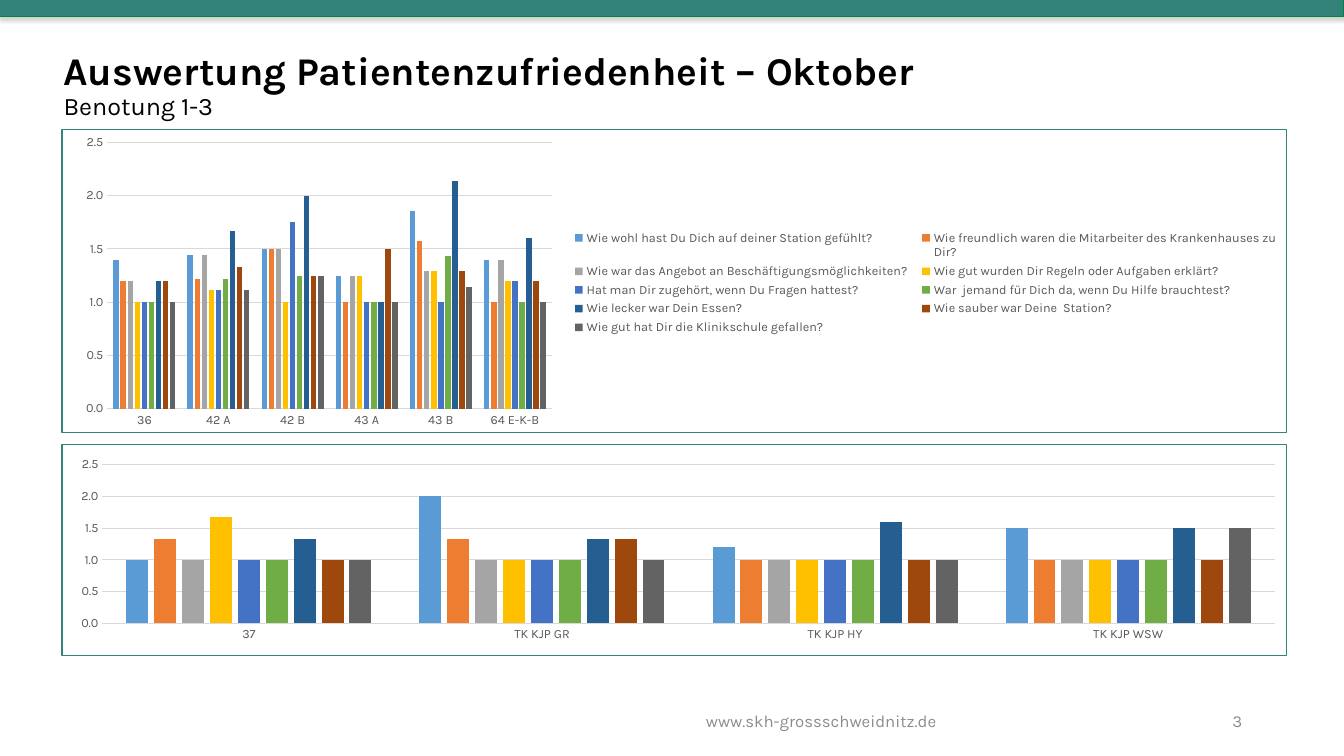
"""Build the October patient satisfaction slide with two column charts."""
from lxml import etree
from pptx import Presentation
from pptx import util as u
from pptx.chart import data as cd
from pptx.dml.color import RGBColor
from pptx.enum import chart as ch, shapes, text
from pptx.oxml import parse_xml
from pptx.oxml.ns import nsdecls, qn

FONT = "Karla"
BLACK = RGBColor(0x00, 0x00, 0x00)
GREY = RGBColor(0x8C, 0x8C, 0x8C)
LABEL = RGBColor(0x59, 0x59, 0x59)
GRID = RGBColor(0xD9, 0xD9, 0xD9)
TEAL = RGBColor(0x32, 0x82, 0x79)
GREEN = RGBColor(0x00, 0x84, 0x42)
HUES = [RGBColor.from_string(h) for h in (
    "5B9BD5", "ED7D31", "A5A5A5", "FFC000", "4472C4",
    "70AD47", "255E91", "9E480E", "636363")]

ASKS = [
    "Wie wohl hast Du Dich auf deiner Station gefühlt?",
    "Wie freundlich waren die Mitarbeiter des Krankenhauses zu\nDir?",
    "Wie war das Angebot an Beschäftigungsmöglichkeiten?",
    "Wie gut wurden Dir Regeln oder Aufgaben erklärt?",
    "Hat man Dir zugehört, wenn Du Fragen hattest?",
    "War  jemand für Dich da, wenn Du Hilfe brauchtest?",
    "Wie lecker war Dein Essen?",
    "Wie sauber war Deine  Station?",
    "Wie gut hat Dir die Klinikschule gefallen?",
]
DAY = {
    "37": (1, 1.33, 1, 1.67, 1, 1, 1.33, 1, 1),
    "TK KJP GR": (2, 1.33, 1, 1, 1, 1, 1.33, 1.33, 1),
    "TK KJP HY": (1.2, 1, 1, 1, 1, 1, 1.6, 1, 1),
    "TK KJP WSW": (1.5, 1, 1, 1, 1, 1, 1.5, 1, 1.5),
}
WARD = {
    "36": (1.4, 1.2, 1.2, 1, 1, 1, 1.2, 1.2, 1),
    "42 A": (1.44, 1.22, 1.44, 1.11, 1.11, 1.22, 1.67, 1.33, 1.11),
    "42 B": (1.5, 1.5, 1.5, 1, 1.75, 1.25, 2, 1.25, 1.25),
    "43 A": (1.25, 1, 1.25, 1.25, 1, 1, 1, 1.5, 1),
    "43 B": (1.86, 1.57, 1.29, 1.29, 1, 1.43, 2.14, 1.29, 1.14),
    "64 E-K-B": (1.4, 1, 1.4, 1.2, 1.2, 1, 1.6, 1.2, 1),
}


def style(font, size, color, bold=False):
    looks = {"name": FONT, "size": u.Pt(size), "bold": bold}
    for key, value in looks.items():
        setattr(font, key, value)
    font.color.rgb = color


def layout(box, inner=False):
    node = etree.Element(qn("c:layout"))
    man = etree.SubElement(node, qn("c:manualLayout"))
    pairs = [("layoutTarget", "inner")] if inner else []
    pairs += [("xMode", "edge"), ("yMode", "edge")] + list(zip("xywh", box))
    for tag, value in pairs:
        etree.SubElement(man, qn("c:" + tag)).set("val", str(value))
    return node


prs = Presentation()
prs.slide_width, prs.slide_height = u.Inches(13.33), u.Inches(7.5)
slide = prs.slides.add_slide(prs.slide_layouts[5])

bar = slide.shapes.add_shape(shapes.MSO_SHAPE.RECTANGLE, 0, 0,
                             prs.slide_width, u.Inches(0.16))
bar.fill.solid()
bar.fill.fore_color.rgb = TEAL
bar.line.color.rgb = GREEN
bar.line.width = u.Pt(0.75)
bar._element.spPr.append(parse_xml(
    f'<a:effectLst {nsdecls("a")}><a:outerShdw blurRad="39370" dist="22860" '
    'dir="5400000" rotWithShape="0"><a:srgbClr val="808080">'
    '<a:alpha val="35000"/></a:srgbClr></a:outerShdw></a:effectLst>'))

title = slide.shapes.title
spots = {"left": 0.53, "top": 0.13, "width": 11.5, "height": 1.45}
for key, value in spots.items():
    setattr(title, key, u.Inches(value))
frame = title.text_frame
frame.vertical_anchor = text.MSO_ANCHOR.MIDDLE
frame.word_wrap = True
frame.auto_size = text.MSO_AUTO_SIZE.NONE
head = frame.paragraphs[0]
head.alignment = text.PP_ALIGN.LEFT
head.line_spacing = 0.9
run = head.add_run()
run.text = "Auswertung Patientenzufriedenheit – Oktober"
style(run.font, 28, BLACK, True)
head.add_line_break()
run = head.add_run()
run.text = "Benotung 1-3"
style(run.font, 18, BLACK)

for words, left, width, align in (
        ("www.skh-grossschweidnitz.de", 4.82, 6.65, text.PP_ALIGN.CENTER),
        ("3", 11.76, 0.66, text.PP_ALIGN.RIGHT)):
    foot = slide.shapes.add_textbox(u.Inches(left), u.Inches(6.95),
                                    u.Inches(width), u.Inches(0.4)).text_frame
    foot.word_wrap = True
    foot.vertical_anchor = text.MSO_ANCHOR.MIDDLE
    foot.text = words
    foot.paragraphs[0].alignment = align
    style(foot.paragraphs[0].runs[0].font, 12, GREY)

for marks, names, top, height, plot, key in (
        (DAY, [f"Series {n}" for n in range(1, 10)], 4.4, 2.11,
         (0.033, 0.098, 0.957, 0.75), None),
        (WARD, ASKS, 1.28, 3.02,
         (0.037, 0.043, 0.363, 0.877), (0.41, 0.32, 0.59, 0.37))):
    data = cd.CategoryChartData(number_format="0.0")
    data.categories = list(marks)
    for name, vals in zip(names, zip(*marks.values())):
        data.add_series(name, vals)
    chart = slide.shapes.add_chart(
        ch.XL_CHART_TYPE.COLUMN_CLUSTERED, u.Inches(0.61), u.Inches(top),
        u.Inches(12.16), u.Inches(height), data).chart
    style(chart.font, 10, BLACK)
    chart.has_title = False
    chart.has_legend = key is not None

    bars = chart.plots[0]
    bars.gap_width, bars.overlap = 219, -27
    bars.vary_by_categories = False
    for series, hue in zip(bars.series, HUES):
        series.format.fill.solid()
        series.format.fill.fore_color.rgb = hue

    cat, val = chart.category_axis, chart.value_axis
    for axis in (cat, val):
        axis.major_tick_mark = axis.minor_tick_mark = ch.XL_TICK_MARK.NONE
        style(axis.tick_labels.font, 9, LABEL)
    val.minimum_scale, val.maximum_scale, val.major_unit = 0, 2.5, 0.5
    val.tick_labels.number_format = "0.0"
    val.tick_labels.number_format_is_linked = False
    val.format.line.fill.background()
    for line in (cat.format.line, val.major_gridlines.format.line):
        line.color.rgb = GRID
        line.width = u.Pt(0.75)

    root = chart._chartSpace
    area = root.chart.plotArea
    for old in area.findall(qn("c:layout")):
        area.remove(old)
    area.insert(0, layout(plot, True))
    root.chart.addnext(parse_xml(
        f'<c:spPr {nsdecls("c", "a")}><a:solidFill><a:srgbClr val="FFFFFF"/>'
        '</a:solidFill><a:ln w="9525"><a:solidFill><a:srgbClr val="358479"/>'
        '</a:solidFill></a:ln></c:spPr>'))
    if key:
        legend = chart.legend
        legend.position = ch.XL_LEGEND_POSITION.RIGHT
        legend.include_in_layout = False
        style(legend.font, 9, LABEL)
        for old in legend._element.findall(qn("c:layout")):
            legend._element.remove(old)
        legend._element.find(qn("c:legendPos")).addnext(layout(key))

prs.save("out.pptx")
